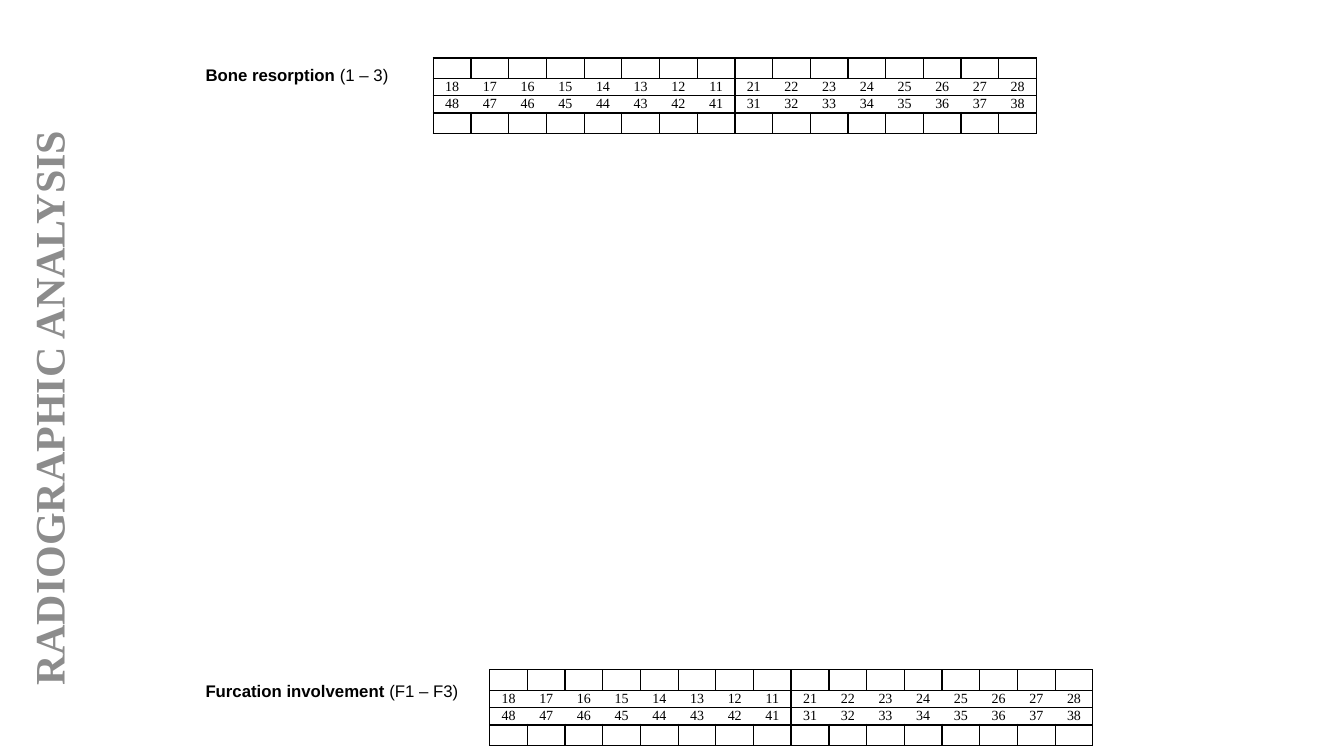
from lxml.etree import SubElement as Sub
from pptx import Presentation
from pptx.dml.color import RGBColor as RGB
from pptx.enum.text import MSO_ANCHOR as Anchor, MSO_AUTO_SIZE as Auto, PP_ALIGN as Align
from pptx.oxml.ns import qn
from pptx.util import Cm, Pt

# Content
TITLE = "RADIOGRAPHIC ANALYSIS"
# Bold label, plain range, label top, chart left, chart top (cm)
PARTS = [
    ("Bone resorption ", "(1 – 3)", 1.5, 5.28, 10.92, 1.46),
    ("Furcation involvement ", "(F1 – F3)", 17.04, 6.96, 12.34, 16.88),
]
TEETH = [
    [],
    [*range(18, 10, -1), *range(21, 29)],
    [*range(48, 40, -1), *range(31, 39)],
    [],
]
COLORS = {"ink": "000000", "title": "8C8C8C"}
SERIF, SANS = "Times New Roman", "Arial"

# Layout (cm)
COLS, HALF = 16, 8
COL = 0.95
ROWS = [0.52, 0.43, 0.43, 0.52]
PAD = 0.18
THIN, THICK = 1, 1.5


def write(frame, runs, size, font, color="ink", align=None):
    """Fill the first paragraph with (text, bold) runs."""
    para = frame.paragraphs[0]
    para.alignment = align
    for text, bold in runs:
        run = para.add_run()
        run.text = text
        run.font.size, run.font.name, run.font.bold = Pt(size), font, bold
        run.font.color.rgb = RGB.from_string(COLORS[color])
    if not runs:
        Sub(para._p, qn("a:endParaRPr"), sz=str(size * 100))


def edge(cell, side, width):
    """Draw one cell border, or clear it when the width is 0."""
    line = Sub(cell._tc.get_or_add_tcPr(), qn("a:ln" + side), w=str(Pt(width)))
    if width:
        fill = Sub(line, qn("a:solidFill"))
        Sub(fill, qn("a:srgbClr"), val=COLORS["ink"])
    else:
        Sub(line, qn("a:noFill"))


def chart(left, top):
    """Draw one tooth chart: two number rows between two blank rows."""
    table = slide.shapes.add_table(
        len(ROWS), COLS, Cm(left), Cm(top), Cm(COL * COLS), Cm(sum(ROWS))
    ).table
    table.first_row = table.horz_banding = False
    for col in table.columns:
        col.width = Cm(COL)
    rules = [THIN, THICK, THIN, THICK, THIN]
    for r, high in enumerate(ROWS):
        table.rows[r].height = Cm(high)
        inner = 0 if TEETH[r] else THIN
        walls = [THICK if c == HALF else THIN if c in (0, COLS) else inner
                 for c in range(COLS + 1)]
        for c in range(COLS):
            cell = table.cell(r, c)
            cell.margin_left = cell.margin_right = Cm(PAD)
            cell.margin_top = cell.margin_bottom = 0
            cell.vertical_anchor = Anchor.MIDDLE
            runs = [(str(TEETH[r][c]), False)] if TEETH[r] else []
            write(cell.text_frame, runs, 10, SERIF, align=Align.CENTER)
            widths = walls[c], walls[c + 1], rules[r], rules[r + 1]
            for side, width in zip("LRTB", widths):
                edge(cell, side, width)
            cell.fill.background()


deck = Presentation()
deck.slide_width, deck.slide_height = Cm(33.87), Cm(19.05)
slide = deck.slides.add_slide(deck.slide_layouts[6])

# Labels and tooth charts
for name, span, y, wide, left, top in PARTS:
    label = slide.shapes.add_textbox(Cm(4.93), Cm(y), Cm(wide), Cm(0.77)).text_frame
    label.word_wrap = False
    label.auto_size = Auto.SHAPE_TO_FIT_TEXT
    write(label, [(name, True), (span, False)], 12, SANS)
    chart(left, top)

# Vertical title
title = slide.shapes.add_textbox(Cm(-7.85), Cm(7.8), Cm(18.11), Cm(1.35))
title.rotation = 270
title.text_frame.word_wrap = True
title.text_frame.vertical_anchor = Anchor.MIDDLE
write(title.text_frame, [(TITLE, True)], 30, SERIF, "title")

deck.save("out.pptx")
